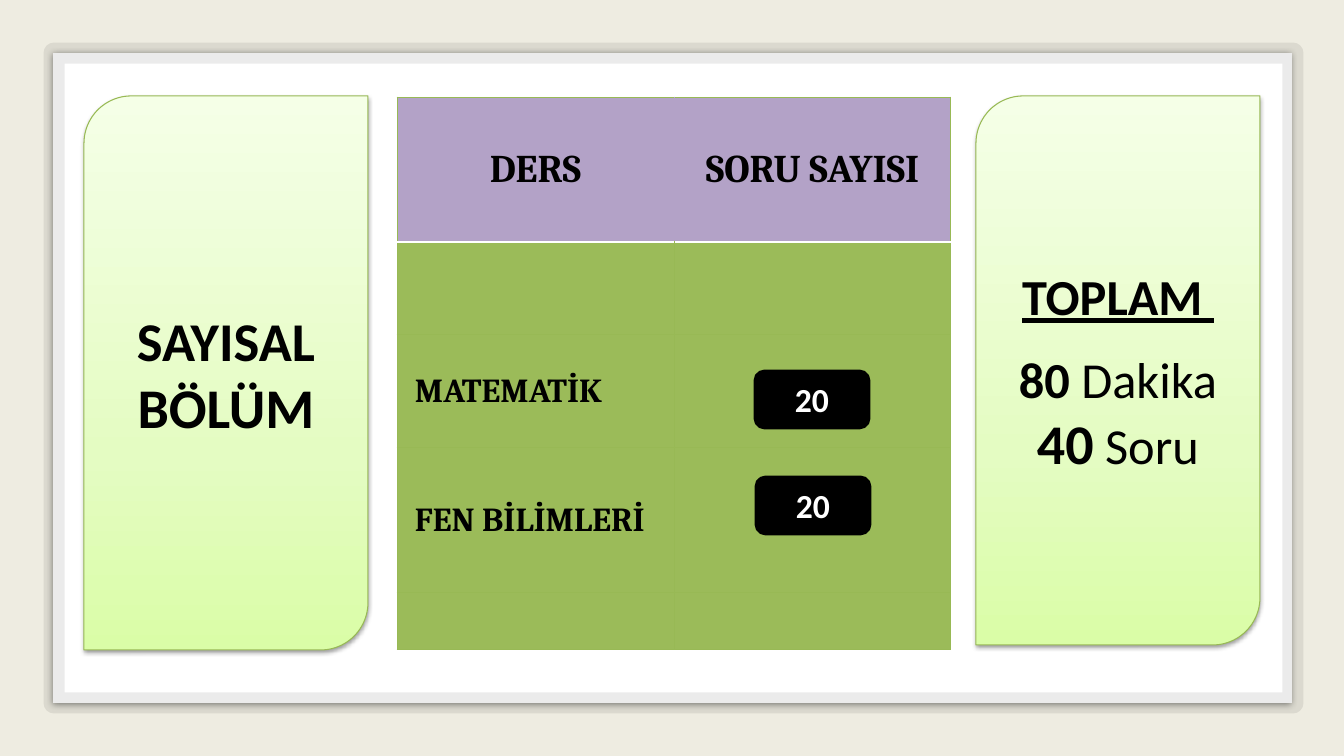
from lxml import etree
from pptx import Presentation
from pptx.dml.color import RGBColor
from pptx.enum.shapes import MSO_SHAPE
from pptx.enum.text import MSO_ANCHOR, PP_ALIGN
from pptx.oxml import parse_xml
from pptx.oxml.ns import nsdecls, qn
from pptx.util import Emu, Pt

RECT = MSO_SHAPE.RECTANGLE
ROUNDED = MSO_SHAPE.ROUNDED_RECTANGLE
LEAF = MSO_SHAPE.ROUND_2_DIAG_RECTANGLE
MIDDLE = MSO_ANCHOR.MIDDLE
LEFT, CENTER = PP_ALIGN.LEFT, PP_ALIGN.CENTER

EMU_PER_PX = 914400 / 100.8
COLORS = {
    "paper": "EEECE1", "white": "FFFFFF", "black": "000000",
    "header": "B3A2C7", "body": "9BBB59", "edge": "98B955",
}
PANEL_STOPS = [(0, "DAFDA7"), (35, "E4FCC2"), (100, "F5FFE7")]
CALIBRI = {"name": "Calibri", "bold": True}
CAMBRIA = {"name": "Cambria", "bold": True}


def px(length):
    return Emu(round(length * EMU_PER_PX))


def color(name):
    return RGBColor.from_string(COLORS[name])


def add_box(page, kind, box, fill=None, line=None, width=0.75):
    shape = page.shapes.add_shape(kind, *map(px, box))
    shape.shadow.inherit = False
    if fill:
        shape.fill.solid()
        shape.fill.fore_color.rgb = color(fill)
    else:
        shape.fill.background()
    if line:
        shape.line.color.rgb = color(line)
        shape.line.width = Pt(width)
    else:
        shape.line.fill.background()
    return shape


def add_shadow(shape, alpha, blur, distance):
    """Cast a black shadow straight down; blur and distance are in points."""
    effects = shape._element.spPr.find(qn("a:effectLst"))
    effects.append(parse_xml(
        f'<a:outerShdw {nsdecls("a")} blurRad="{Pt(blur)}" dist="{Pt(distance)}" '
        f'dir="5400000" algn="t" rotWithShape="0"><a:srgbClr val="{COLORS["black"]}">'
        f'<a:alpha val="{alpha * 1000}"/></a:srgbClr></a:outerShdw>'))


def write(frame, paragraphs, ink="black", align=CENTER, space_after=0):
    """Fill a text frame; each paragraph is a list of (text, font values)."""
    frame.word_wrap = True
    frame.vertical_anchor = MIDDLE
    for index, spans in enumerate(paragraphs):
        para = frame.add_paragraph() if index else frame.paragraphs[0]
        para.alignment = align
        para.space_after = Pt(space_after)
        for text, values in spans:
            span = para.add_run()
            span.text = text
            span.font.color.rgb = color(ink)
            for key, value in values.items():
                setattr(span.font, key, value)


def add_frame(page, box):
    left, top, width, height = box
    add_box(page, RECT, (0, 0, 1344, 756), "paper")
    sheet = add_box(page, RECT, box, "white")
    add_shadow(sheet, 43, 5, 1.4)
    border = add_box(page, RECT, (left + 1, top, width, height), line="black", width=15)
    ink = border._element.spPr.find(qn("a:ln")).find(".//" + qn("a:srgbClr"))
    etree.SubElement(ink, qn("a:alpha")).set("val", "7000")


def add_panel(page, box, paragraphs, space_after=0):
    panel = add_box(page, LEAF, box, line="edge")
    stops = "".join(f'<a:gs pos="{at * 1000}"><a:srgbClr val="{tint}"/></a:gs>'
                    for at, tint in PANEL_STOPS)
    properties = panel._element.spPr
    properties.replace(properties.find(qn("a:noFill")), parse_xml(
        f'<a:gradFill {nsdecls("a")} rotWithShape="1"><a:gsLst>{stops}</a:gsLst>'
        '<a:lin ang="16200000" scaled="0"/></a:gradFill>'))
    add_shadow(panel, 38, 3.1, 1.6)
    write(panel.text_frame, paragraphs, space_after=space_after)


def set_borders(cell, sides):
    """Draw cell edges; they must come before the fill."""
    properties = cell._tc.get_or_add_tcPr()
    for index, (side, (name, width)) in enumerate(sides.items()):
        properties.insert(index, parse_xml(
            f'<a:ln{side} {nsdecls("a")} w="{Pt(width)}"><a:solidFill>'
            f'<a:srgbClr val="{COLORS[name]}"/></a:solidFill></a:ln{side}>'))


def add_lessons(page, box, heights, rows):
    columns = len(rows[0])
    table = page.shapes.add_table(len(rows), columns, *map(px, box)).table
    table.first_row = table.horz_banding = False
    for column in table.columns:
        column.width = px(box[2] / columns)
    edge, inner, rule = ("edge", 0.75), ("header", 0.75), ("white", 2)
    for r, texts in enumerate(rows):
        table.rows[r].height = px(heights[r])
        for c, text in enumerate(texts):
            cell = table.cell(r, c)
            margins = {"margin_left": 18, "margin_right": 18,
                       "margin_top": 9, "margin_bottom": 9}
            for key, value in margins.items():
                setattr(cell, key, px(value))
            cell.vertical_anchor = MIDDLE
            cell.fill.solid()
            cell.fill.fore_color.rgb = color("body" if r else "header")
            if r:
                sides = {"L": edge, "R": edge, "T": rule if r == 1 else edge, "B": edge}
            else:
                sides = {"L": inner if c else edge,
                         "R": edge if c == columns - 1 else inner, "T": edge, "B": rule}
            set_borders(cell, sides)
            if text:
                font = {**CAMBRIA, "size": Pt(24 if r else 28)}
                write(cell.text_frame, [[(text, font)]], align=LEFT if r else CENTER)


def add_count(page, box, count):
    badge = add_box(page, ROUNDED, box, "black", "black", 2)
    write(badge.text_frame, [[(count, {**CALIBRI, "size": Pt(24)})]], ink="white")


def main():
    deck = Presentation()
    deck.slide_width, deck.slide_height = px(1344), px(756)
    page = deck.slides.add_slide(deck.slide_layouts[6])
    add_frame(page, (53, 53, 1239, 650))
    add_lessons(page, (397, 97, 554, 553), (145, 93, 113, 145, 57), [
        ("DERS", "SORU SAYISI"), ("", ""), ("MATEMATİK", ""),
        ("FEN BİLİMLERİ", ""), ("", "")])
    large = {**CALIBRI, "size": Pt(40)}
    medium = {**CALIBRI, "size": Pt(36)}
    plain = {**medium, "bold": False}
    add_panel(page, (84, 96, 284, 554), [
        [("SAYISAL", {**CALIBRI, "size": Pt(39)})], [("BÖLÜM", large)]])
    add_panel(page, (976, 96, 284, 549), [
        [("TOPLAM ", {**medium, "underline": True})],
        [("80", medium), (" Dakika ", plain), ("40", large), (" Soru", plain)],
    ], space_after=16)
    for left, top in ((755, 371), (756, 477)):
        add_count(page, (left, top, 114, 57), "20")
    deck.save("out.pptx")


if __name__ == "__main__":
    main()
